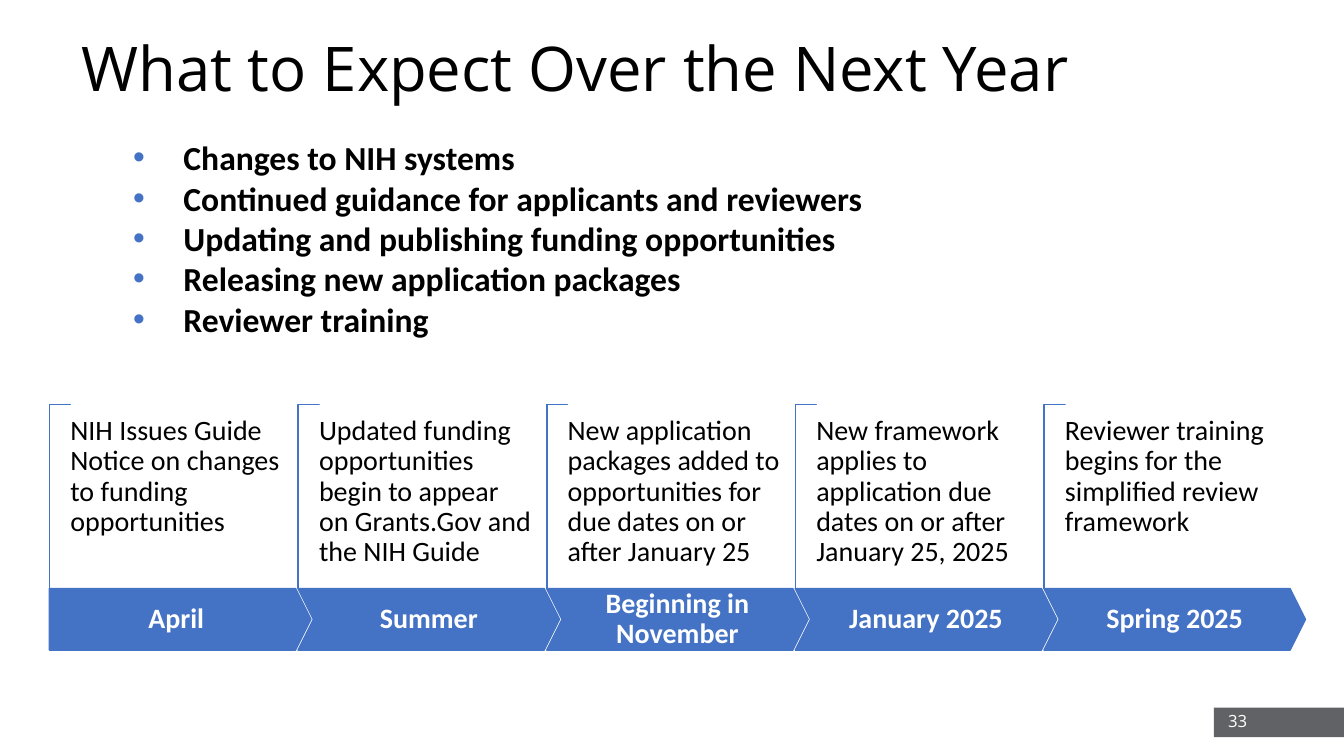
from dataclasses import dataclass

import pptx
import pptx.dml.color
import pptx.enum.shapes
import pptx.enum.text
import pptx.oxml
import pptx.oxml.ns
import pptx.util

Pt = pptx.util.Pt
Preset = pptx.enum.shapes.MSO_SHAPE
Align = pptx.enum.text.PP_ALIGN
Anchor = pptx.enum.text.MSO_ANCHOR

BLUE, GREY, BLACK, WHITE = "4472C4", "616265", "000000", "FFFFFF"
SIDES = ("margin_left", "margin_top", "margin_right", "margin_bottom")


@dataclass
class Box:
    left: float
    top: float
    width: float
    height: float


@dataclass
class TextStyle:
    size: float
    color: str = BLACK
    font: str = "Calibri"
    bold: bool = False
    align: Align = Align.LEFT
    anchor: Anchor = Anchor.TOP
    spacing: float = 1.0
    insets: tuple[float, ...] = (7.2, 3.6, 7.2, 3.6)
    bullet: str = ""


@dataclass
class Stage:
    period: str
    event: str


TITLE = TextStyle(44, font="Open Sans", anchor=Anchor.MIDDLE, spacing=0.9)
EXPECTED = TextStyle(24, bold=True, bullet="•")
PERIOD = TextStyle(20, WHITE, bold=True, align=Align.CENTER, anchor=Anchor.MIDDLE,
                   spacing=0.9, insets=(20, 10, 20, 10))
EVENT = TextStyle(20, spacing=0.9, insets=(0, 0, 0, 0))
PAGE = TextStyle(12, WHITE, "Open Sans", align=Align.RIGHT, anchor=Anchor.MIDDLE)

EXPECTATIONS = [
    "Changes to NIH systems",
    "Continued guidance for applicants and reviewers",
    "Updating and publishing funding opportunities",
    "Releasing new application packages",
    "Reviewer training",
]
STAGES = [
    Stage("April", "NIH Issues Guide Notice on changes to funding opportunities"),
    Stage("Summer", "Updated funding opportunities begin to appear on Grants.Gov "
                    "and the NIH Guide"),
    Stage("Beginning in November", "New application packages added to opportunities "
                                   "for due dates on or after January 25"),
    Stage("January 2025", "New framework applies to application due dates on or "
                          "after January 25, 2025"),
    Stage("Spring 2025", "Reviewer training begins for the simplified review framework"),
]

# Timeline geometry in points
FIRST_LEFT, STEP = 35.3, 177.6
BRACKET_TOP, ARROW_TOP = 289, 420.4
ARROW_WIDTH, ARROW_HEIGHT = 186.8, 44
BRACKET_WIDTH = 15


def rgb(color: str) -> pptx.dml.color.RGBColor:
    return pptx.dml.color.RGBColor.from_string(color)


def place(box: Box) -> list[pptx.util.Length]:
    return [Pt(value) for value in (box.left, box.top, box.width, box.height)]


def assign(target: object, values: dict[str, object]) -> None:
    for name, value in values.items():
        setattr(target, name, value)


def add_bullet(paragraph: object, symbol: str) -> None:
    """Hang a coloured bullet in front of the paragraph."""
    properties = paragraph._p.get_or_add_pPr()
    paragraph.level = 1
    properties.set("marL", str(Pt(54)))
    properties.set("indent", str(Pt(-36)))
    space = pptx.oxml.ns.nsdecls("a")
    for markup in (
        f'<a:buClr {space}><a:srgbClr val="{BLUE}"/></a:buClr>',
        f'<a:buFont {space} typeface="Arial"/>',
        f'<a:buChar {space} char="{symbol}"/>',
    ):
        properties.append(pptx.oxml.parse_xml(markup))


def write(shape: object, lines: list[str], style: TextStyle) -> None:
    frame = shape.text_frame
    assign(frame, {"word_wrap": True, "vertical_anchor": style.anchor})
    assign(frame, {side: Pt(inset) for side, inset in zip(SIDES, style.insets)})
    for index, line in enumerate(lines):
        paragraph = frame.add_paragraph() if index else frame.paragraphs[0]
        assign(paragraph, {"alignment": style.align, "line_spacing": style.spacing})
        if style.bullet:
            add_bullet(paragraph, style.bullet)
        run = paragraph.add_run()
        run.text = line
        assign(run.font, {"name": style.font, "size": Pt(style.size), "bold": style.bold})
        run.font.color.rgb = rgb(style.color)


def add_text(slide: object, box: Box, lines: list[str], style: TextStyle) -> None:
    write(slide.shapes.add_textbox(*place(box)), lines, style)


def add_figure(slide: object, preset: Preset, box: Box, fill: str, line: str = "",
               adjustments: tuple[float, ...] = (), rotation: float = 0) -> object:
    figure = slide.shapes.add_shape(preset, *place(box))
    figure.shadow.inherit = False
    figure.rotation = rotation
    for index, value in enumerate(adjustments):
        figure.adjustments[index] = value
    figure.fill.solid()
    figure.fill.fore_color.rgb = rgb(fill)
    if line:
        figure.line.color.rgb = rgb(line)
        figure.line.width = Pt(1)
    else:
        figure.line.fill.background()
    return figure


def add_stage(slide: object, index: int, stage: Stage) -> None:
    left = FIRST_LEFT + index * STEP
    # Bracket: a flat corner turned upright about its centre
    length = ARROW_TOP - BRACKET_TOP
    shift = (length - BRACKET_WIDTH) / 2
    bracket = Box(left - shift, BRACKET_TOP + shift, length, BRACKET_WIDTH)
    add_figure(slide, Preset.CORNER, bracket, WHITE, BLUE, (0.01, 0.01), 90)
    # Arrow with its period
    preset = Preset.CHEVRON if index else Preset.PENTAGON
    arrow = add_figure(slide, preset, Box(left, ARROW_TOP, ARROW_WIDTH, ARROW_HEIGHT),
                       BLUE, BLUE, (0.25,))
    write(arrow, [stage.period], PERIOD)
    # Event above the arrow
    add_text(slide, Box(left + BRACKET_WIDTH, 297.4, 152, 80), [stage.event], EVENT)


def main() -> None:
    deck = pptx.Presentation()
    assign(deck, {"slide_width": Pt(960), "slide_height": Pt(540)})
    slide = deck.slides.add_slide(deck.slide_layouts[6])

    # Page number
    add_figure(slide, Preset.RECTANGLE, Box(867, 505.5, 93, 21), GREY)
    add_text(slide, Box(682, 500.5, 216, 29), ["33"], PAGE)

    # Title and expectations
    add_text(slide, Box(51, -1, 828, 104.5), ["What to Expect Over the Next Year"], TITLE)
    add_text(slide, Box(70, 94.5, 828, 271.5), EXPECTATIONS, EXPECTED)

    # Timeline
    for index, stage in enumerate(STAGES):
        add_stage(slide, index, stage)

    deck.save("out.pptx")


if __name__ == "__main__":
    main()
